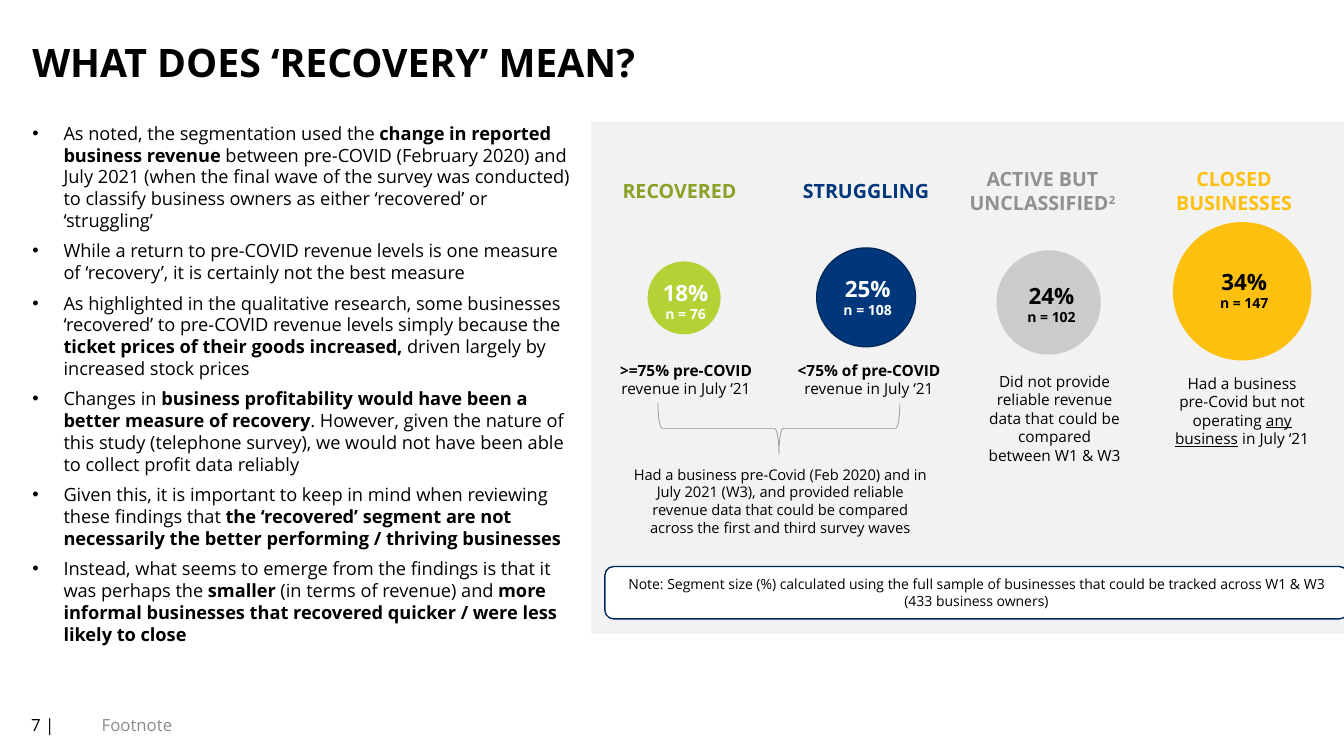
"""Build the slide that explains what recovery means for the surveyed businesses."""
from dataclasses import dataclass

import pptx
import pptx.dml.color
import pptx.enum.shapes
import pptx.enum.text
import pptx.oxml
import pptx.oxml.ns
import pptx.util

Inches = pptx.util.Inches
Pt = pptx.util.Pt
RGBColor = pptx.dml.color.RGBColor
Align = pptx.enum.text.PP_ALIGN
Anchor = pptx.enum.text.MSO_ANCHOR
Kind = pptx.enum.shapes.MSO_SHAPE

FONT = "Open Sans"
BLACK = RGBColor(0x00, 0x00, 0x00)
WHITE = RGBColor(0xFF, 0xFF, 0xFF)
PANEL = RGBColor(0xF2, 0xF2, 0xF2)
NAVY = RGBColor(0x00, 0x29, 0x5B)
BLUE = RGBColor(0x00, 0x37, 0x7B)
LIME = RGBColor(0xB3, 0xD2, 0x35)
OLIVE = RGBColor(0x89, 0xA1, 0x24)
YELLOW = RGBColor(0xFE, 0xC0, 0x0F)
SILVER = RGBColor(0xCA, 0xCB, 0xCD)
HEADING_GREY = RGBColor(0x90, 0x90, 0x90)
BRACE_GREY = RGBColor(0x94, 0x94, 0x94)
FOOTER_GREY = RGBColor(0x8C, 0x8C, 0x8C)


@dataclass(frozen=True)
class Box:
    left: float
    top: float
    width: float
    height: float

    def lengths(self) -> tuple:
        return tuple(Inches(n) for n in (self.left, self.top, self.width, self.height))


@dataclass(frozen=True)
class Run:
    text: str
    bold: bool = False
    underline: bool = False
    raised: bool = False


@dataclass(frozen=True)
class Segment:
    heading: list[Run]
    heading_box: Box
    heading_color: RGBColor
    circle: Box
    fill: RGBColor
    line: RGBColor
    share: str
    count: str
    share_box: Box
    share_color: RGBColor
    definition: list[Run]
    definition_box: Box
    filled_label: bool = False


BULLETS = [
    [Run("As noted, the segmentation used the "),
     Run("change in reported business revenue ", bold=True),
     Run("between pre-COVID (February 2020) and July 2021 (when the final wave of the survey "
         "was conducted) to classify business owners as either ‘recovered’ or ‘struggling’")],
    [Run("While a return to pre-COVID revenue levels is one measure of ‘recovery’, "
         "it is certainly not the best measure")],
    [Run("As highlighted in the qualitative research, some businesses ‘recovered’ to "
         "pre-COVID revenue levels simply because the "),
     Run("ticket prices of their goods increased, ", bold=True),
     Run("driven largely by increased stock prices")],
    [Run("Changes in "),
     Run("business profitability would have been a better measure of recovery", bold=True),
     Run(". However, given the nature of this study (telephone survey), we would not have "
         "been able to collect profit data reliably")],
    [Run("Given this, it is important to keep in mind when reviewing these findings that "),
     Run("the ‘recovered’ segment are not necessarily the better performing / thriving "
         "businesses", bold=True)],
    [Run("Instead, what seems to emerge from the findings is that it was perhaps the "),
     Run("smaller", bold=True),
     Run(" (in terms of revenue) and "),
     Run("more informal businesses that recovered quicker / were less likely to close",
         bold=True)],
]

SEGMENTS = [
    Segment([Run("RECOVERED", True)], Box(5.81, 1.73, 1.86, 0.34), OLIVE,
            Box(6.43, 2.6, 0.71, 0.71), LIME, LIME,
            "18%", "n = 76", Box(6.35, 2.72, 0.9, 0.54), WHITE,
            [Run(">=75% pre-COVID ", True), Run("revenue in July ‘21")],
            Box(5.94, 3.53, 1.73, 0.47)),
    Segment([Run("STRUGGLING", True)], Box(7.66, 1.73, 1.86, 0.34), BLUE,
            Box(8.1, 2.46, 0.98, 0.98), BLUE, NAVY,
            "25%", "n = 108", Box(8.11, 2.68, 0.99, 0.54), WHITE,
            [Run("<75% of pre-COVID ", True), Run("revenue in July ‘21")],
            Box(7.57, 3.53, 2.1, 0.47)),
    Segment([Run("ACTIVE BUT UNCLASSIFIED", True), Run("2", True, raised=True)],
            Box(9.31, 1.61, 2.06, 0.57), HEADING_GREY,
            Box(9.89, 2.49, 1.02, 1.02), SILVER, SILVER,
            "24%", "n = 102", Box(9.98, 2.75, 0.9, 0.54), BLACK,
            [Run("Did not provide reliable revenue data that could be compared "
                 "between W1 & W3")], Box(9.67, 3.64, 1.58, 1.03)),
    Segment([Run("CLOSED BUSINESSES", True)], Box(11.39, 1.61, 1.7, 0.57), YELLOW,
            Box(11.64, 2.21, 1.36, 1.36), YELLOW, YELLOW,
            "34%", "n = 147", Box(11.89, 2.61, 0.9, 0.54), BLACK,
            [Run("Had a business pre-Covid but not operating "),
             Run("any business", underline=True), Run(" in July ‘21")],
            Box(11.53, 3.66, 1.58, 0.84), filled_label=True),
]


def write_runs(paragraph, runs: list[Run], size: float, color: RGBColor, align=Align.CENTER) -> None:
    paragraph.alignment = align
    paragraph.space_before = Pt(0)
    paragraph.font.name = FONT
    paragraph.font.size = Pt(size)
    paragraph.font.color.rgb = color
    for item in runs:
        run = paragraph.add_run()
        run.text = item.text
        run.font.bold = item.bold
        if item.underline:
            run.font.underline = True
        if item.raised:
            run.font._element.set("baseline", "30000")


def place(shape, box: Box, anchor=Anchor.TOP):
    shape.left, shape.top, shape.width, shape.height = box.lengths()
    frame = shape.text_frame
    frame.word_wrap = True
    frame.auto_size = pptx.enum.text.MSO_AUTO_SIZE.NONE
    frame.vertical_anchor = anchor
    return frame


def add_text(slide, box: Box, runs: list[Run], size: float, color: RGBColor = BLACK,
             align=Align.CENTER, anchor=Anchor.TOP) -> None:
    frame = place(slide.shapes.add_textbox(*box.lengths()), box, anchor)
    write_runs(frame.paragraphs[0], runs, size, color, align)


def add_shape(slide, kind, box: Box, fill: RGBColor | None, line: RGBColor, width: float = 1):
    shape = slide.shapes.add_shape(kind, *box.lengths())
    shape.shadow.inherit = False
    if fill is None:
        shape.fill.background()
    else:
        shape.fill.solid()
        shape.fill.fore_color.rgb = fill
    shape.line.color.rgb = line
    shape.line.width = Pt(width)
    return shape


def add_bullets(frame) -> None:
    for index, runs in enumerate(BULLETS):
        paragraph = frame.paragraphs[0] if index == 0 else frame.add_paragraph()
        properties = paragraph._p.get_or_add_pPr()
        properties.set("marL", str(Inches(0.31)))
        properties.set("indent", str(-Inches(0.31)))
        properties.append(pptx.oxml.parse_xml(
            f'<a:buFont {pptx.oxml.ns.nsdecls("a")} typeface="Arial"/>'))
        properties.append(pptx.oxml.parse_xml(
            f'<a:buChar {pptx.oxml.ns.nsdecls("a")} char="•"/>'))
        write_runs(paragraph, runs, 13, BLACK, Align.LEFT)
        paragraph.space_after = Pt(6)


def add_segment(slide, segment: Segment) -> None:
    add_text(slide, segment.heading_box, segment.heading, 14, segment.heading_color)
    add_shape(slide, Kind.OVAL, segment.circle, segment.fill, segment.line)
    if segment.filled_label:
        shape = add_shape(slide, Kind.RECTANGLE, segment.share_box, segment.fill, segment.line, 0.75)
    else:
        shape = slide.shapes.add_textbox(*segment.share_box.lengths())
    label = place(shape, segment.share_box)
    write_runs(label.paragraphs[0], [Run(segment.share, True)], 16, segment.share_color)
    write_runs(label.add_paragraph(), [Run(segment.count, True)], 10, segment.share_color)
    add_text(slide, segment.definition_box, segment.definition, 11)


def main() -> None:
    presentation = pptx.Presentation()
    presentation.slide_width, presentation.slide_height = Inches(13.33), Inches(7.5)
    slide = presentation.slides.add_slide(presentation.slide_layouts[1])
    title = place(slide.shapes.title, Box(0.22, 0.33, 7.21, 0.57))
    write_runs(title.paragraphs[0], [Run("WHAT DOES ‘RECOVERY’ MEAN?", True)], 28, BLACK, Align.LEFT)
    add_bullets(place(slide.placeholders[1], Box(0.22, 1.16, 5.53, 5.33)))
    add_shape(slide, Kind.RECTANGLE, Box(5.87, 1.22, 7.47, 5.06), PANEL, PANEL)
    for segment in SEGMENTS:
        add_segment(slide, segment)
    brace = add_shape(slide, Kind.RIGHT_BRACE, Box(7.47, 3.05, 0.51, 2.4), None, BRACE_GREY, 0.5)
    brace.rotation = 90
    add_text(slide, Box(6.14, 4.57, 3.2, 0.81),
             [Run("Had a business pre-Covid (Feb 2020) and in July 2021 (W3), and provided reliable "
                  "revenue data that could be compared across the first and third survey waves")], 10.5)
    note_box = Box(6, 5.62, 7.37, 0.52)
    note = place(add_shape(slide, Kind.ROUNDED_RECTANGLE, note_box, WHITE, NAVY), note_box, Anchor.MIDDLE)
    write_runs(note.paragraphs[0],
               [Run("Note: Segment size (%) calculated using the full sample of businesses that could "
                    "be tracked across W1 & W3 (433 business owners)")], 10, BLACK)
    add_text(slide, Box(0.21, 6.99, 0.69, 0.4), [Run("7 |")], 12, BLACK, Align.LEFT, Anchor.MIDDLE)
    add_text(slide, Box(0.91, 6.99, 11.97, 0.4), [Run("Footnote")], 12, FOOTER_GREY,
             Align.LEFT, Anchor.MIDDLE)
    presentation.save("out.pptx")


if __name__ == "__main__":
    main()
